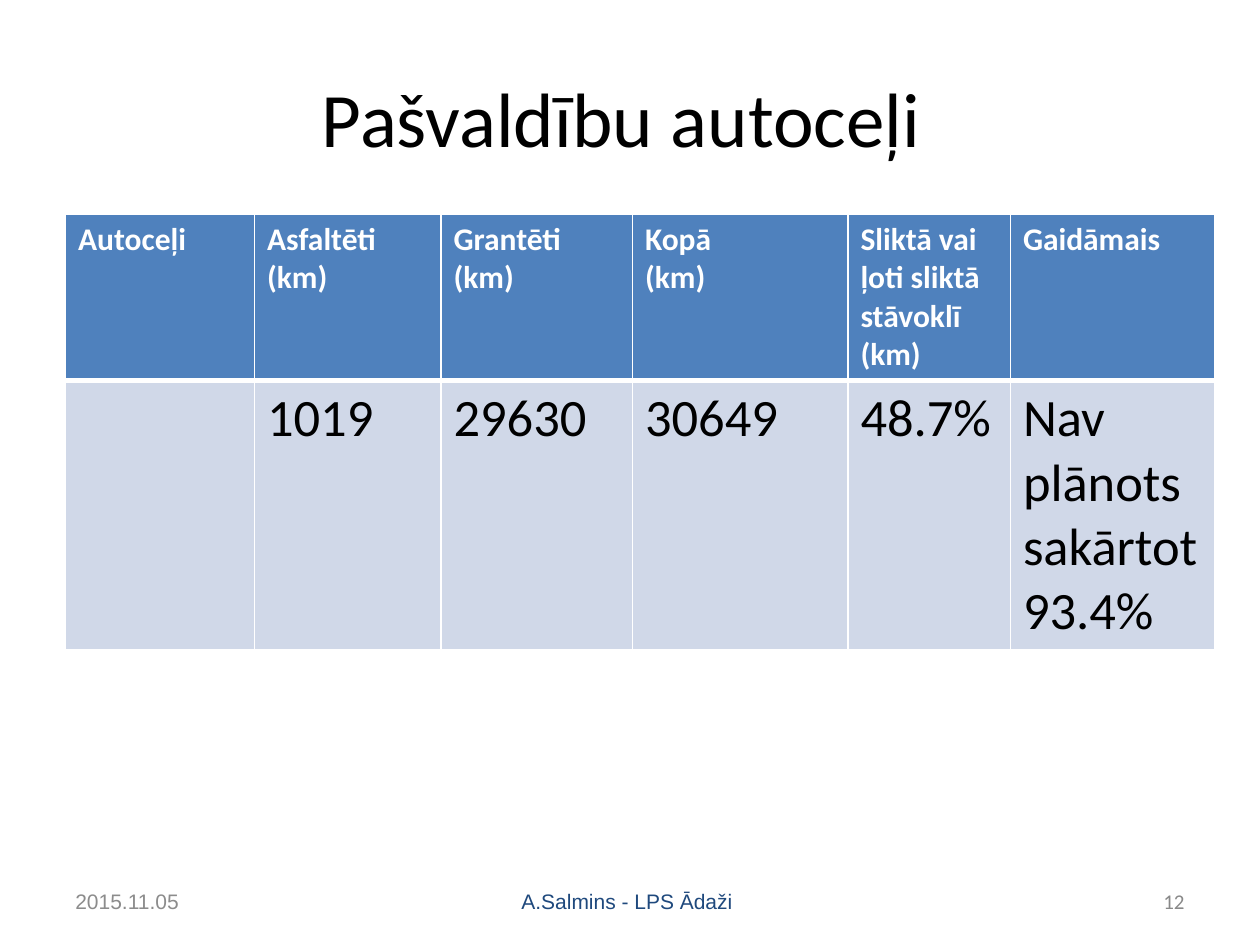
from dataclasses import dataclass

from lxml.etree import SubElement
from pptx import Presentation
from pptx.dml.color import RGBColor
from pptx.enum.text import MSO_ANCHOR, PP_ALIGN
from pptx.oxml.ns import qn
from pptx.util import Inches, Pt


@dataclass(frozen=True)
class Theme:
    heading_font: str = "Calibri"
    footer_font: str = "Arial"
    ink: str = "000000"
    white: str = "FFFFFF"
    header_fill: str = "4F81BD"
    body_fill: str = "D0D8E8"
    author: str = "1F497D"
    date: str = "8C8C8C"
    number: str = "898989"
    title_size: int = 44
    header_size: int = 18
    body_size: int = 30
    footer_size: int = 12
    rule: int = 1
    header_rule: int = 3


THEME = Theme()
COLUMN_WIDTHS = [1.5, 1.48, 1.52, 1.71, 1.29, 1.62]
ROW_HEIGHTS = [1.3, 2.1]
HEADERS = [
    ["Autoceļi"],
    ["Asfaltēti", "(km)"],
    ["Grantēti", "(km)"],
    ["Kopā", "(km)"],
    ["Sliktā vai ļoti sliktā stāvoklī", "(km)"],
    ["Gaidāmais"],
]
ROADS = [[], ["1019"], ["29630"], ["30649"], ["48.7%"], ["Nav plānots sakārtot 93.4%"]]


def write(frame, lines, size, color, font, bold=False, align=PP_ALIGN.LEFT):
    frame.word_wrap = True
    for index, line in enumerate(lines):
        paragraph = frame.add_paragraph() if index else frame.paragraphs[0]
        paragraph.alignment = align
        run = paragraph.add_run()
        run.text = line
        run.font.size = Pt(size)
        run.font.name = font
        run.font.bold = bold
        run.font.color.rgb = RGBColor.from_string(color)


def add_title(slide, left, top, width, height):
    title = slide.shapes.title
    title.left, title.top = Inches(left), Inches(top)
    title.width, title.height = Inches(width), Inches(height)
    title.text_frame.vertical_anchor = MSO_ANCHOR.MIDDLE
    write(title.text_frame, ["Pašvaldību autoceļi "], THEME.title_size, THEME.ink,
          THEME.heading_font, align=PP_ALIGN.CENTER)


def set_borders(cell, **widths):
    properties = cell._tc.get_or_add_tcPr()
    for side in "LRTB":
        border = SubElement(properties, qn(f"a:ln{side}"),
                            w=str(Pt(widths.get(side, THEME.rule))))
        fill = SubElement(border, qn("a:solidFill"))
        SubElement(fill, qn("a:srgbClr"), val=THEME.white)


def fill_row(row, contents, fill, size, color, bold, borders):
    for cell, lines in zip(row.cells, contents):
        cell.margin_left = cell.margin_right = Inches(0.1)
        cell.margin_top = cell.margin_bottom = Inches(0.05)
        set_borders(cell, **borders)
        cell.fill.solid()
        cell.fill.fore_color.rgb = RGBColor.from_string(fill)
        write(cell.text_frame, lines, size, color, THEME.heading_font, bold)


def add_road_table(slide, left, top, width, height):
    roads = slide.shapes.add_table(
        len(ROW_HEIGHTS), len(COLUMN_WIDTHS),
        Inches(left), Inches(top), Inches(width), Inches(height)).table
    for column, column_width in zip(roads.columns, COLUMN_WIDTHS):
        column.width = Inches(column_width)
    for row, row_height in zip(roads.rows, ROW_HEIGHTS):
        row.height = Inches(row_height)
    fill_row(roads.rows[0], HEADERS, THEME.header_fill, THEME.header_size,
             THEME.white, True, {"B": THEME.header_rule})
    fill_row(roads.rows[1], ROADS, THEME.body_fill, THEME.body_size,
             THEME.ink, False, {"T": THEME.header_rule})


def add_footer(slide, left, top, width, height):
    side_width, author_width = 2.33, 3.17
    entries = [
        ("A.Salmins - LPS Ādaži ", left + (width - author_width) / 2, author_width,
         THEME.author, THEME.footer_font, PP_ALIGN.CENTER),
        ("12", left + width - side_width, side_width,
         THEME.number, THEME.heading_font, PP_ALIGN.RIGHT),
        ("2015.11.05", left, side_width,
         THEME.date, THEME.footer_font, PP_ALIGN.LEFT),
    ]
    for text, entry_left, entry_width, color, font, align in entries:
        entry = slide.shapes.add_textbox(
            Inches(entry_left), Inches(top), Inches(entry_width), Inches(height))
        entry.text_frame.vertical_anchor = MSO_ANCHOR.MIDDLE
        write(entry.text_frame, [text], THEME.footer_size, color, font, align=align)


def main():
    presentation = Presentation()
    presentation.slide_width, presentation.slide_height = Inches(10), Inches(7.5)
    slide = presentation.slides.add_slide(presentation.slide_layouts[5])
    add_title(slide, 0.5, 0.3, 9, 1.25)
    add_road_table(slide, 0.52, 1.7, sum(COLUMN_WIDTHS), sum(ROW_HEIGHTS))
    add_footer(slide, 0.5, 6.95, 9, 0.4)
    presentation.save("out.pptx")


if __name__ == "__main__":
    main()
